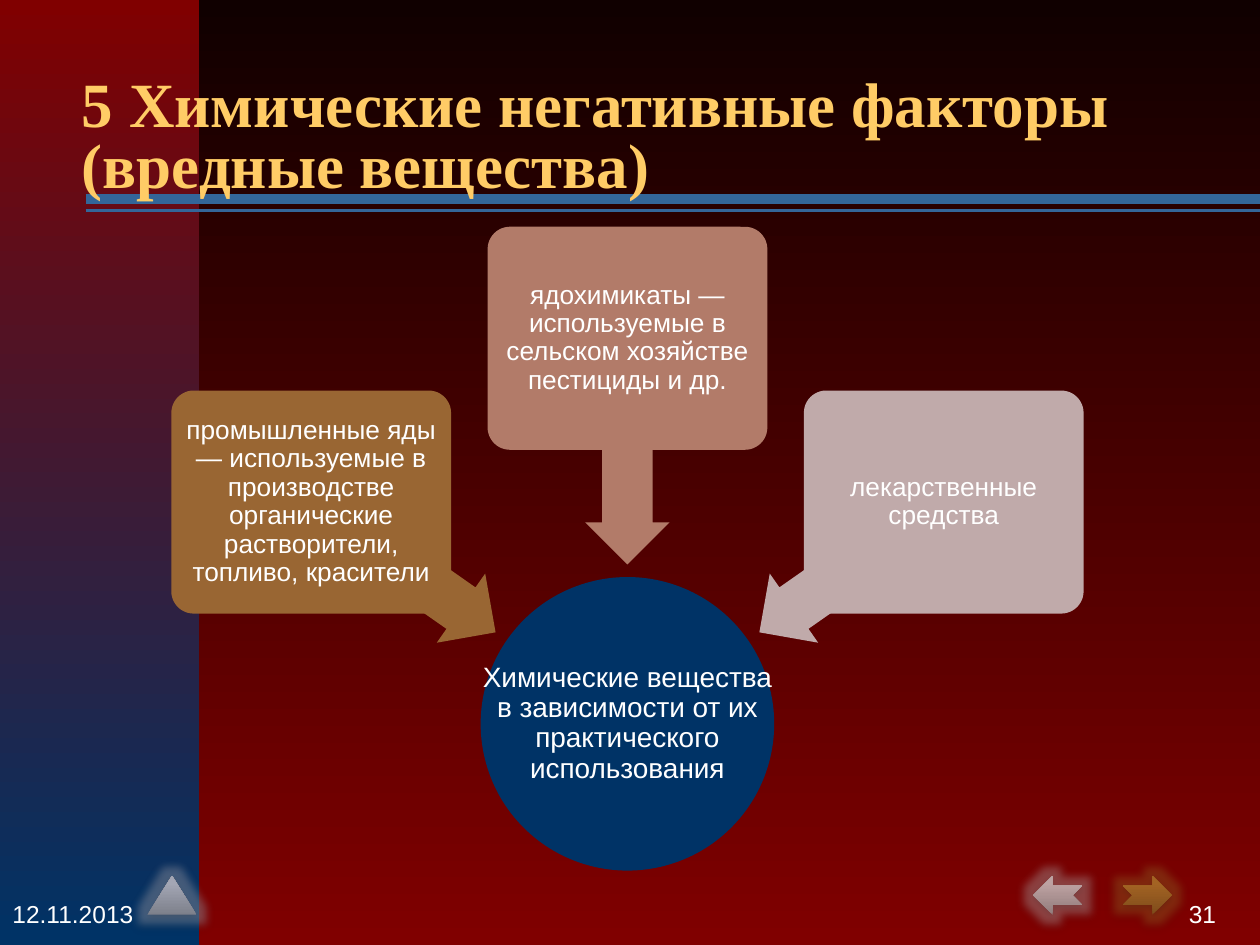
from lxml import etree
from pptx import Presentation
from pptx.dml.color import RGBColor
from pptx.enum import shapes, text
from pptx.oxml import ns
from pptx.util import Inches, Pt

WHITE = RGBColor(0xFF, 0xFF, 0xFF)
GOLD = RGBColor(0xFF, 0xCC, 0x66)
NAVY = RGBColor(0x00, 0x33, 0x66)
BLUE = RGBColor(0x33, 0x66, 0x99)
DARK = RGBColor(0x10, 0x00, 0x00)
RED = RGBColor(0x80, 0x00, 0x00)
BROWN = RGBColor(0x99, 0x66, 0x33)
CLAY = RGBColor(0xB2, 0x7B, 0x69)
ROSE = RGBColor(0xC0, 0xAA, 0xAA)

TITLE = "5 Химические негативные факторы (вредные вещества)"
HUB = "Химические вещества в зависимости от их практического использования"
GROUPS = [
    ("промышленные яды — используемые в производстве органические растворители, топливо, красители", BROWN, 3.1, 4.17),
    ("ядохимикаты — используемые в сельском хозяйстве пестициды и др.", CLAY, 1.8, 3.25),
    ("лекарственные средства", ROSE, 3.1, 4.17),
]
RULES = [(1.67, 2), (1.58, 6)]
FOOTERS = [("12.11.2013", 0, text.PP_ALIGN.LEFT), ("31", 7.67, text.PP_ALIGN.RIGHT)]
BUTTONS = [
    (shapes.MSO_SHAPE.NOTCHED_RIGHT_ARROW, 8.91, False, RGBColor(0x7E, 0x4C, 0x1B), RGBColor(0xA3, 0x63, 0x23)),
    (shapes.MSO_SHAPE.NOTCHED_RIGHT_ARROW, 8.2, True, RGBColor(0x92, 0x7C, 0x7C), RGBColor(0xBD, 0xA2, 0xA2)),
    (shapes.MSO_SHAPE.FLOWCHART_EXTRACT, 1.17, False, RGBColor(0x7D, 0x80, 0x8B), RGBColor(0xA3, 0xA6, 0xB4)),
]
CENTER = 4.98
BOX_WIDTH, BOX_HEIGHT, BOX_STEP = 2.22, 1.77, 2.51
ARROW_WIDTH, ARROW_HEIGHT, ARROW_STEP = 1.79, 0.67, 1.78
HUB_SIZE, HUB_TOP = 2.33, 4.58


def set_gradient(fill, start, end, angle, end_position=1.0):
    fill.gradient()
    fill.gradient_angle = angle
    first, last = fill.gradient_stops
    first.color.rgb, first.position = start, 0
    last.color.rgb, last.position = end, end_position


def add_effect(effects, kind, color, alpha, **attributes):
    effect = etree.SubElement(effects, ns.qn(f"a:{kind}"), attributes)
    tint = etree.SubElement(effect, ns.qn("a:srgbClr"), val=str(color))
    etree.SubElement(tint, ns.qn("a:alpha"), val=str(alpha * 1000))


def add_plain(slide, kind, left, top, width, height, color=None):
    shape = slide.shapes.add_shape(kind, Inches(left), Inches(top), Inches(width), Inches(height))
    shape.shadow.inherit = False
    shape.line.fill.background()
    if color is not None:
        shape.fill.solid()
        shape.fill.fore_color.rgb = color
    return shape


def add_box(slide, left, top, width, height):
    return slide.shapes.add_textbox(Inches(left), Inches(top), Inches(width), Inches(height))


def write(shape, words, size, color=WHITE, font="Arial", align=text.PP_ALIGN.CENTER,
          spacing=0.9, margin=None, anchor=text.MSO_ANCHOR.MIDDLE):
    frame = shape.text_frame
    frame.word_wrap = True
    frame.auto_size = text.MSO_AUTO_SIZE.NONE
    frame.vertical_anchor = anchor
    if margin is not None:
        frame.margin_left = frame.margin_right = Inches(margin)
        frame.margin_top = frame.margin_bottom = Inches(margin)
    paragraph = frame.paragraphs[0]
    paragraph.text = words
    paragraph.alignment = align
    paragraph.line_spacing = spacing
    paragraph.font.size = Pt(size)
    paragraph.font.name = font
    paragraph.font.color.rgb = color
    return paragraph


def add_backdrop(slide):
    set_gradient(slide.background.fill, DARK, RED, 270)
    band = add_plain(slide, shapes.MSO_SHAPE.RECTANGLE, 0, 0, 1.58, 7.5)
    set_gradient(band.fill, RED, NAVY, 270)
    for y, weight in RULES:
        rule = slide.shapes.add_connector(
            shapes.MSO_CONNECTOR.STRAIGHT, Inches(0.68), Inches(y), Inches(10), Inches(y))
        rule.line.color.rgb = BLUE
        rule.line.width = Pt(weight)
        etree.SubElement(rule.element.spPr, ns.qn("a:effectLst"))


def add_title(slide):
    title = slide.shapes.title
    title.left, title.top = Inches(0.55), Inches(0.39)
    title.width, title.height = Inches(9), Inches(1.25)
    paragraph = write(title, TITLE, 36, GOLD, "Times New Roman", text.PP_ALIGN.LEFT,
                      0.8, anchor=text.MSO_ANCHOR.BOTTOM)
    paragraph.font.bold = True
    properties = paragraph.runs[0].font
    properties.color.rgb = GOLD
    run_element = paragraph.runs[0]._r.get_or_add_rPr()
    effects = etree.SubElement(run_element, ns.qn("a:effectLst"))
    add_effect(effects, "outerShdw", "000000", 100, dist=str(Pt(3)), dir="2700000")
    title.element.getparent().append(title.element)


def add_diagram(slide):
    hub = (CENTER - HUB_SIZE / 2, HUB_TOP, HUB_SIZE, HUB_SIZE)
    add_plain(slide, shapes.MSO_SHAPE.OVAL, *hub, NAVY)
    write(add_box(slide, *hub), HUB, 16, margin=0.01)
    for step, (words, color, box_top, arrow_top) in enumerate(GROUPS, start=-1):
        arrow = add_plain(slide, shapes.MSO_SHAPE.LEFT_ARROW,
                          CENTER + step * ARROW_STEP - ARROW_WIDTH / 2, arrow_top,
                          ARROW_WIDTH, ARROW_HEIGHT, color)
        arrow.adjustments[0] = 0.6
        arrow.rotation = 270 + 55 * step
        box = add_plain(slide, shapes.MSO_SHAPE.ROUNDED_RECTANGLE,
                        CENTER + step * BOX_STEP - BOX_WIDTH / 2, box_top,
                        BOX_WIDTH, BOX_HEIGHT, color)
        box.adjustments[0] = 0.1
        write(box, words, 15, margin=0.03)


def add_footer(slide):
    for words, left, align in FOOTERS:
        write(add_box(slide, left, 7, 2.08, 0.5), words, 14, align=align, spacing=1.0)
    for kind, left, flipped, start, end in BUTTONS:
        button = add_plain(slide, kind, left, 6.95, 0.39, 0.31)
        set_gradient(button.fill, start, end, 90, 0.8)
        if flipped:
            button.element.spPr.find(ns.qn("a:xfrm")).set("flipH", "1")
        effects = button.element.spPr.find(ns.qn("a:effectLst"))
        add_effect(effects, "glow", end, 40, rad=str(Pt(10)))
        add_effect(effects, "outerShdw", "000000", 35,
                   blurRad=str(Pt(3.1)), dist=str(Pt(1.8)), dir="5400000")


def main():
    presentation = Presentation()
    presentation.slide_width, presentation.slide_height = Inches(10), Inches(7.5)
    slide = presentation.slides.add_slide(presentation.slide_layouts[5])
    add_backdrop(slide)
    add_title(slide)
    add_diagram(slide)
    add_footer(slide)
    presentation.save("out.pptx")


if __name__ == "__main__":
    main()
